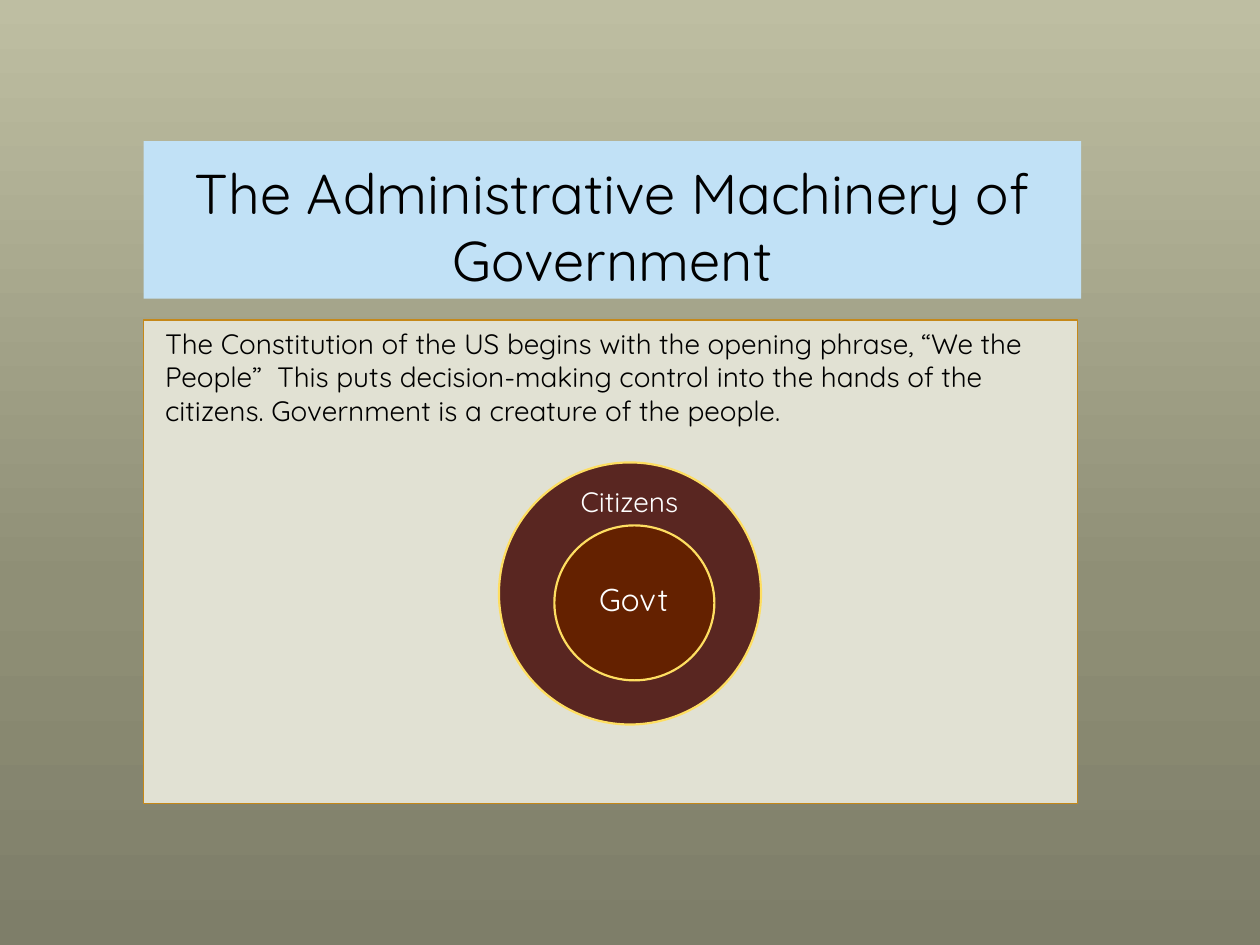
import copy
from dataclasses import dataclass

import pptx
import pptx.dml.color
import pptx.enum.shapes
import pptx.enum.text
import pptx.oxml.ns
import pptx.util

Inches = pptx.util.Inches
Pt = pptx.util.Pt
Align = pptx.enum.text.PP_ALIGN
Anchor = pptx.enum.text.MSO_ANCHOR
Preset = pptx.enum.shapes.MSO_SHAPE


@dataclass(frozen=True)
class Theme:
    font: str = "Quicksand"
    background: tuple = ((0, "BEBEA2"), (0.62, "8F8F76"), (1, "7E7E69"))
    title_fill: str = "C1E1F6"
    body_fill: str = "E1E1D3"
    body_line: str = "C58819"
    citizens_fill: str = "592621"
    govt_fill: str = "642100"
    ring_line: str = "FEDE61"
    dark_text: str = "000000"
    light_text: str = "FFFFFF"
    title_size: int = 32
    body_size: int = 16
    citizens_size: int = 16
    govt_size: int = 18


THEME = Theme()


def rgb(value):
    return pptx.dml.color.RGBColor.from_string(value)


def paint_background(slide):
    fill = slide.background.fill
    fill.gradient()
    fill.gradient_angle = 270
    stop_list = next(slide.element.iter(pptx.oxml.ns.qn("a:gsLst")))
    stop_list.append(copy.deepcopy(stop_list[-1]))
    for stop, (position, color) in zip(fill.gradient_stops, THEME.background):
        stop.position = position
        stop.color.rgb = rgb(color)


def add_panel(shapes, preset, box, fill, line=None, line_width=0.75):
    panel = shapes.add_shape(preset, *map(Inches, box))
    panel.shadow.inherit = False
    panel.fill.solid()
    panel.fill.fore_color.rgb = rgb(fill)
    if line:
        panel.line.color.rgb = rgb(line)
        panel.line.width = Pt(line_width)
    else:
        panel.line.fill.background()
    return panel


def write(holder, text, size, color, align, anchor):
    frame = holder.text_frame
    frame.word_wrap = True
    frame.vertical_anchor = anchor
    paragraph = frame.paragraphs[0]
    paragraph.alignment = align
    run = paragraph.add_run()
    run.text = text
    run.font.name = THEME.font
    run.font.size = Pt(size)
    run.font.color.rgb = rgb(color)
    return frame


def add_ring_label(shapes, box, text, size, inset):
    label = shapes.add_textbox(*map(Inches, box))
    frame = write(label, text, size, THEME.light_text, Align.CENTER, Anchor.MIDDLE)
    frame.margin_left = frame.margin_right = Inches(inset)
    frame.margin_top = frame.margin_bottom = Inches(inset)
    frame.paragraphs[0].line_spacing = 0.9


def add_rings(slide):
    rings = slide.shapes.add_group_shape().shapes
    for ring, fill, label, text, size, inset in (
        ((3.96, 3.67, 2.08, 2.08), THEME.citizens_fill,
         (4.45, 3.82, 1.09, 0.35), "Citizens", THEME.citizens_size, 0.12),
        ((4.4, 4.17, 1.27, 1.23), THEME.govt_fill,
         (4.58, 4.47, 0.9, 0.61), "Govt", THEME.govt_size, 0.14),
    ):
        add_panel(rings, Preset.OVAL, ring, fill, THEME.ring_line, 1.25)
        add_ring_label(rings, label, text, size, inset)


def main():
    deck = pptx.Presentation()
    deck.slide_width, deck.slide_height = Inches(10), Inches(7.5)
    slide = deck.slides.add_slide(deck.slide_layouts[6])
    paint_background(slide)

    title = add_panel(slide.shapes, Preset.RECTANGLE, (1.14, 1.12, 7.44, 1.25),
                      THEME.title_fill)
    write(title, "The Administrative Machinery of Government",
          THEME.title_size, THEME.dark_text, Align.CENTER, Anchor.BOTTOM)

    body = add_panel(slide.shapes, Preset.RECTANGLE, (1.14, 2.54, 7.41, 3.84),
                     THEME.body_fill, THEME.body_line)
    body_frame = write(
        body,
        "The Constitution of the US begins with the opening phrase, “We the "
        "People”  This puts decision-making control into the hands of the "
        "citizens. Government is a creature of the people.",
        THEME.body_size, THEME.dark_text, Align.LEFT, Anchor.TOP)
    body_frame.margin_left = Inches(0.17)
    body_frame.paragraphs[0].space_before = Pt(0.2 * THEME.body_size)

    add_rings(slide)
    deck.save("out.pptx")


if __name__ == "__main__":
    main()
